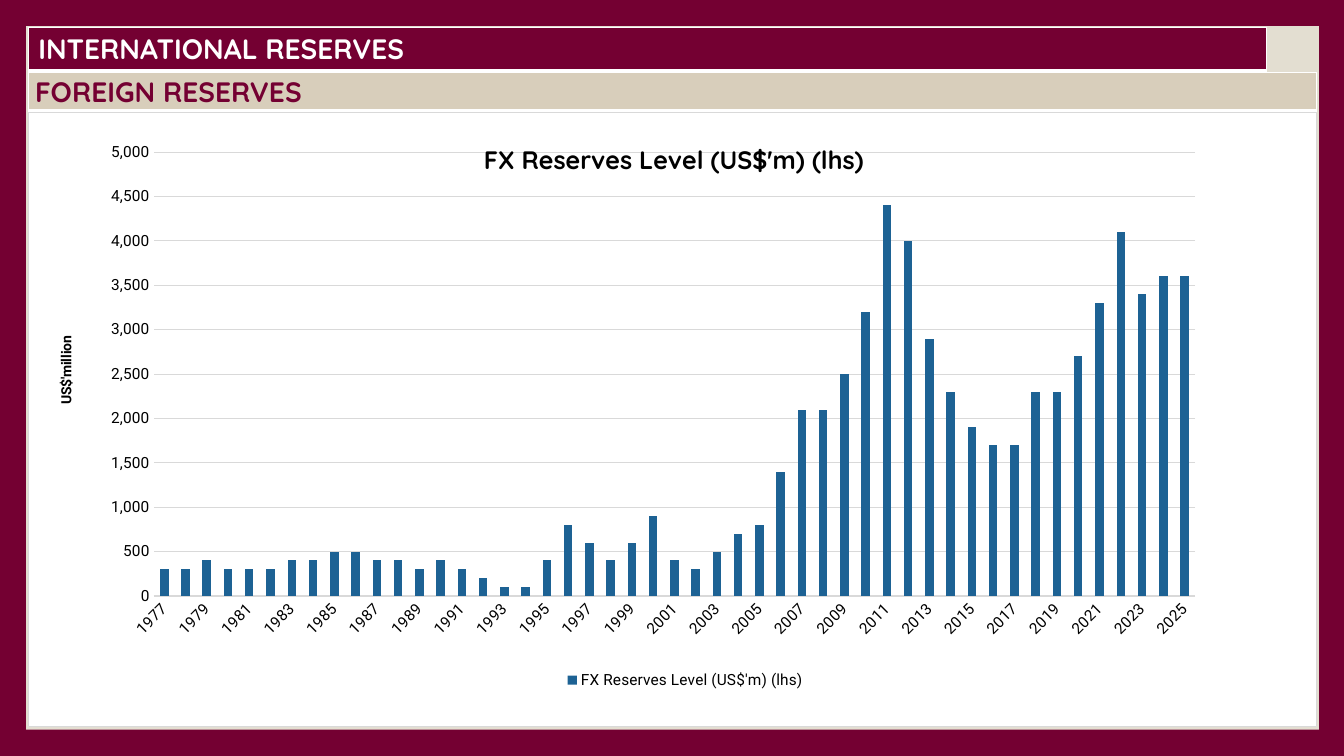
from lxml import etree
from pptx import Presentation
from pptx.chart.data import CategoryChartData
from pptx.dml.color import RGBColor
from pptx.enum.chart import XL_CHART_TYPE as ChartType, XL_LEGEND_POSITION as LegendPos, XL_TICK_MARK as Tick
from pptx.enum.shapes import MSO_SHAPE as Shape
from pptx.enum.text import MSO_ANCHOR as Anchor
from pptx.oxml import parse_xml
from pptx.oxml.ns import nsdecls, qn
from pptx.util import Inches, Pt

COLORS = {"wine": "740032", "sand": "D8CEBB", "stone": "E3DED1", "white": "FFFFFF",
          "grid": "D9D9D9", "bar": "1D6294", "black": "000000"}
HEAD, BODY = "Quicksand", "Roboto"
SERIES = "FX Reserves Level (US$'m) (lhs)"
FIRST_YEAR = 1977
RESERVES = [300, 300, 400, 300, 300, 300, 400, 400, 500, 500, 400, 400, 300, 400, 300, 200, 100,
            100, 400, 800, 600, 400, 600, 900, 400, 300, 500, 700, 800, 1400, 2100, 2100, 2500,
            3200, 4400, 4000, 2900, 2300, 1900, 1700, 1700, 2300, 2300, 2700, 3300, 4100, 3400,
            3600, 3600]


def rgb(name):
    return RGBColor.from_string(COLORS[name])


def paint(fill, color):
    fill.solid()
    fill.fore_color.rgb = rgb(color)


def style(font, size, color="black", face=BODY, bold=False):
    font.size, font.name, font.bold = Pt(size), face, bold
    font.color.rgb = rgb(color)


def write(tf, text, before=0, **fmt):
    p = tf.paragraphs[0]
    if before:
        p.space_before = Pt(before)
    r = p.add_run()
    r.text = text
    style(r.font, **fmt)


def format_cell(cell, fill, bottom=1, inset=0.1, margin=0.0):
    cell.margin_left = cell.margin_right = Inches(inset)
    cell.margin_top = cell.margin_bottom = Inches(margin)
    cell.vertical_anchor = Anchor.MIDDLE
    tcPr = cell._tc.get_or_add_tcPr()
    for side in "LRTB":
        width = Pt(bottom if side == "B" else 1)
        tcPr.append(parse_xml(
            f'<a:ln{side} {nsdecls("a")} w="{width}"><a:solidFill>'
            f'<a:srgbClr val="{COLORS["white"]}"/></a:solidFill></a:ln{side}>'))
    paint(cell.fill, fill)


def add_grid(slide, box, heights):
    table = slide.shapes.add_table(len(heights), 1, *map(Inches, box)).table
    table.first_row = table.horz_banding = False
    for row, height in zip(table.rows, heights):
        row.height = Inches(height)
    return table


def add_backdrop(slide, box):
    paint(slide.background.fill, "wine")
    sp = slide.shapes.add_shape(Shape.RECTANGLE, *map(Inches, box))
    sp.shadow.inherit = False
    paint(sp.fill, "stone")
    sp.line.fill.background()


def add_header(slide, box):
    cell = add_grid(slide, box, [box[3]]).cell(0, 0)
    format_cell(cell, "wine", bottom=3, margin=0.04)
    write(cell.text_frame, "INTERNATIONAL RESERVES", size=20, color="white", face=HEAD, bold=True)


def add_section(slide, box, band):
    table = add_grid(slide, box, [band, box[3] - band])
    title, panel = table.cell(0, 0), table.cell(1, 0)
    format_cell(title, "sand", bottom=3, inset=0.07)
    write(title.text_frame, "FOREIGN RESERVES", before=2, size=20, color="wine", face=HEAD, bold=True)
    format_cell(panel, "stone")


def set_layout(element, after, inner=False, **shares):
    for old in element.findall(qn("c:layout")):
        element.remove(old)
    layout = parse_xml(f'<c:layout {nsdecls("c")}><c:manualLayout/></c:layout>')
    manual = layout[0]
    entries = [("layoutTarget", "inner")] if inner else []
    entries += [(f"{key}Mode", "edge") for key in "xy"] + list(shares.items())
    for tag, value in entries:
        etree.SubElement(manual, qn(f"c:{tag}")).set("val", str(value))
    if after is None:
        element.insert(0, layout)
    else:
        element.find(qn(f"c:{after}")).addnext(layout)


def format_axes(chart):
    years, levels = chart.category_axis, chart.value_axis
    for axis in (years, levels):
        axis.major_tick_mark = axis.minor_tick_mark = Tick.NONE
        style(axis.tick_labels.font, 11)
    years.format.line.color.rgb = rgb("grid")
    years.format.line.width = Pt(0.75)
    years._element.find(f'{qn("c:txPr")}/{qn("a:bodyPr")}').set("rot", "-2700000")
    skip = parse_xml(f'<c:tickLblSkip {nsdecls("c")} val="2"/>')
    years._element.find(qn("c:noMultiLvlLbl")).addprevious(skip)

    levels.minimum_scale, levels.maximum_scale, levels.major_unit = 0, 5000, 500
    levels.tick_labels.number_format = "#,##0"
    levels.tick_labels.number_format_is_linked = False
    levels.format.line.fill.background()
    levels.major_gridlines.format.line.color.rgb = rgb("grid")
    levels.major_gridlines.format.line.width = Pt(0.75)
    write(levels.axis_title.text_frame, "US$'million", size=10, bold=True)
    body = levels.axis_title._element.find(f'.//{qn("a:bodyPr")}')
    body.set("rot", "-5400000")
    body.set("vert", "horz")
    set_layout(levels.axis_title._element, "tx", x=0.02, y=0.36)


def add_reserves_chart(slide, box):
    data = CategoryChartData(number_format="#,##0")
    data.categories = [str(FIRST_YEAR + i) for i in range(len(RESERVES))]
    data.add_series(SERIES, RESERVES)
    chart = slide.shapes.add_chart(ChartType.COLUMN_CLUSTERED, *map(Inches, box), data).chart
    style(chart.font, 10, face=HEAD)
    plot = chart.plots[0]
    plot.gap_width, plot.vary_by_categories = 150, False
    paint(plot.series[0].format.fill, "bar")
    format_axes(chart)

    write(chart.chart_title.text_frame, SERIES, size=18, face=HEAD, bold=True)
    chart.chart_title.include_in_layout = True
    set_layout(chart.chart_title._element, "tx", x=0.35, y=0.04)

    chart.has_legend = True
    chart.legend.position = LegendPos.RIGHT
    chart.legend.include_in_layout = False
    style(chart.legend.font, 11)
    set_layout(chart.legend._element, "legendPos", x=0.41, y=0.9, w=0.2, h=0.05)

    space = chart._chartSpace
    set_layout(space.chart.plotArea, None, inner=True, x=0.097, y=0.065, w=0.809, h=0.723)
    space.chart.addnext(parse_xml(
        f'<c:spPr {nsdecls("c", "a")}><a:solidFill><a:srgbClr val="{COLORS["white"]}"/></a:solidFill>'
        f'<a:ln w="{Pt(0.75)}"><a:solidFill><a:srgbClr val="{COLORS["grid"]}"/></a:solidFill></a:ln></c:spPr>'))


def main():
    prs = Presentation()
    prs.slide_width, prs.slide_height = Inches(13.33), Inches(7.5)
    slide = prs.slides.add_slide(prs.slide_layouts[6])
    left, width, top, bottom, band = 0.28, 12.78, 0.72, 7.21, 0.38
    chart_top = top + band + 0.01
    add_backdrop(slide, (0.26, 0.26, 12.82, 6.98))
    add_header(slide, (left, 0.27, 12.28, 0.43))
    add_section(slide, (left, top, width, bottom - top), band)
    add_reserves_chart(slide, (left, chart_top, width, bottom - chart_top))
    prs.save("out.pptx")


if __name__ == "__main__":
    main()
